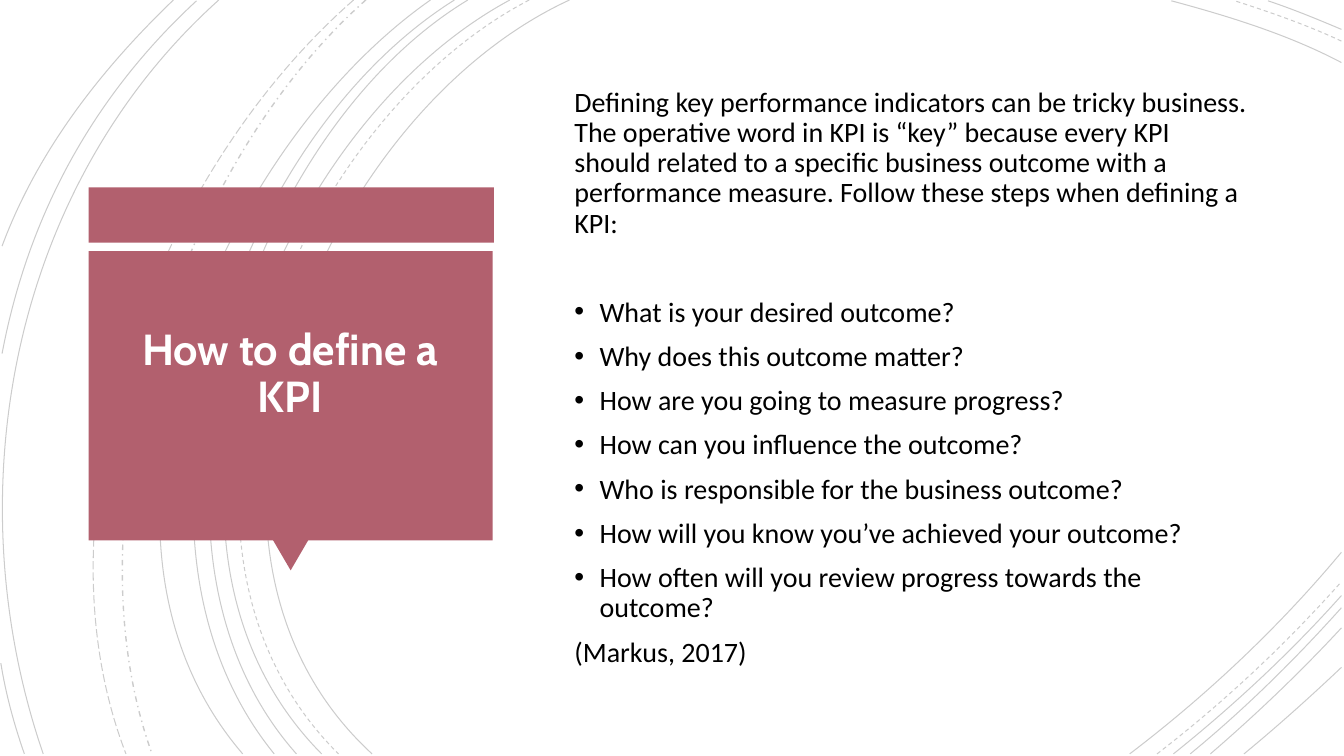
from dataclasses import dataclass
from typing import NamedTuple

from lxml import etree
from pptx import Presentation
from pptx.dml.color import RGBColor
from pptx.enum.dml import MSO_LINE
from pptx.enum.shapes import MSO_SHAPE
from pptx.enum.text import MSO_ANCHOR, MSO_AUTO_SIZE, PP_ALIGN
from pptx.oxml.ns import qn
from pptx.util import Inches, Pt

RECT, TRIANGLE = MSO_SHAPE.RECTANGLE, MSO_SHAPE.ISOSCELES_TRIANGLE
SOLID, DASH = MSO_LINE.SOLID, MSO_LINE.DASH
LONG_DASH, DASH_DOT = MSO_LINE.LONG_DASH, MSO_LINE.DASH_DOT
MIDDLE, CENTER, LEFT = MSO_ANCHOR.MIDDLE, PP_ALIGN.CENTER, PP_ALIGN.LEFT

COLS, ROWS = 32, 18
CELL = Inches(7.5) / ROWS
TITLE_ONLY = 5


@dataclass(frozen=True)
class Theme:
    accent: RGBColor = RGBColor(0xB2, 0x60, 0x6E)
    ink: RGBColor = RGBColor(0, 0, 0)
    paper: RGBColor = RGBColor(0xFF, 0xFF, 0xFF)
    title_font: str = "Cabin"
    body_font: str = "Calibri"
    title_size: float = 31
    body_size: float = 20
    leading: float = 0.9
    gap: float = 10
    section_gap: float = 42
    arc_opacity: int = 20


THEME = Theme()


class Box(NamedTuple):
    col: float
    row: float
    cols: float
    rows: float


class Point(NamedTuple):
    col: float
    row: float


class Arc(NamedTuple):
    start: Point
    bend1: Point
    bend2: Point
    end: Point
    dash: MSO_LINE = SOLID
    width: float = 0.75


class Panel(NamedTuple):
    kind: MSO_SHAPE
    box: Box
    rotation: float = 0


class Para(NamedTuple):
    text: str
    bullet: bool = False
    before: float = THEME.gap


BOTTOM, RIGHT, TOP = 17.95, 31.94, 0.02


def left_arc(x0: float, x1: float, y1: float, x2: float, y2: float, x3: float,
             dash: MSO_LINE = SOLID, width: float = 0.75) -> Arc:
    return Arc(Point(x0, 0), Point(x1, y1), Point(x2, y2), Point(x3, BOTTOM), dash, width)


def top_arc(y0: float, x1: float, y1: float, x2: float, y2: float, x3: float,
            dash: MSO_LINE = SOLID) -> Arc:
    return Arc(Point(RIGHT, y0), Point(x1, y1), Point(x2, y2), Point(x3, TOP), dash)


def corner_arc(x0: float, x1: float, y1: float, x2: float, y2: float, y3: float,
               dash: MSO_LINE = SOLID) -> Arc:
    return Arc(Point(x0, BOTTOM), Point(x1, y1), Point(x2, y2), Point(RIGHT, y3), dash)


ARCS = [
    left_arc(13.56, 7.56, 2.76, 3.43, 12.96, 8.86),
    top_arc(1.49, 30.67, 0.82, 29.23, 0.38, 27.89),
    corner_arc(26.9, 28.73, 16.56, 30.46, 14.93, 13.15),
    left_arc(12.6, 6.84, 3, 2.95, 12.89, 8.06, DASH),
    top_arc(0.98, 31.13, 0.6, 30.24, 0.29, 29.4, DASH),
    corner_arc(27.55, 29.11, 16.75, 30.6, 15.36, 13.85, DASH),
    left_arc(12.14, 6.48, 3.05, 2.64, 12.89, 7.66),
    top_arc(0.7, 31.37, 0.46, 30.79, 0.22, 30.19),
    corner_arc(27.94, 29.35, 16.82, 30.72, 15.55, 14.18),
    left_arc(11.14, 5.86, 3.19, 2.64, 12.98, 7.06),
    corner_arc(28.34, 29.62, 16.9, 30.82, 15.72, 14.47),
    left_arc(10.82, 5.54, 3.31, 2.33, 12.79, 6.53),
    corner_arc(28.82, 29.9, 17.02, 30.96, 16.01, 14.95),
    left_arc(10.25, 5.21, 3.53, 1.27, 12.7, 5.78),
    corner_arc(29.62, 30.41, 17.3, 31.18, 16.61, 15.89),
    left_arc(8.71, 4.22, 3.98, 1.56, 12.22, 3.62, DASH_DOT, 1),
    left_arc(8.42, 3.77, 4.06, 0.7, 11.98, 3, LONG_DASH),
    left_arc(5.21, 0.26, 4.44, -1.1, 11.76, 1.03),
    Arc(Point(4.68, 0.02), Point(2.21, 2.3), Point(0.67, 5.14), Point(0.05, 8.42)),
    Arc(Point(0.02, 15.79), Point(0.14, 16.54), Point(0.34, 17.26), Point(0.58, BOTTOM)),
    Arc(Point(4.13, 0), Point(2.4, 1.66), Point(0.89, 3.6), Point(0.05, 5.86)),
]

PANELS = [
    Panel(RECT, Box(2.11, 4.46, 9.65, 1.32)),
    Panel(TRIANGLE, Box(6.5, 12.86, 0.84, 0.72), 180),
    Panel(RECT, Box(2.11, 5.98, 9.62, 6.89)),
]

TITLE_BOX = Box(2.38, 6.34, 9.05, 6.29)
TITLE_LIFT = 1.22
BODY_BOX = Box(13.44, 2.11, 16.49, 13.78)

BODY = [
    Para("Defining key performance indicators can be tricky business. The operative word "
         "in KPI is “key” because every KPI should related to a specific business outcome "
         "with a performance measure. Follow these steps when defining a KPI:"),
    Para("What is your desired outcome?", True, THEME.section_gap),
    Para("Why does this outcome matter?", True),
    Para("How are you going to measure progress?", True),
    Para("How can you influence the outcome?", True),
    Para("Who is responsible for the business outcome?", True),
    Para("How will you know you’ve achieved your outcome?", True),
    Para("How often will you review progress towards the outcome?", True),
    Para("(Markus, 2017)"),
]


def emu(cells: float) -> int:
    return round(cells * CELL)


def frame(box: Box) -> list[int]:
    return [emu(v) for v in box]


def draw_arc(s, arc: Arc) -> None:
    points = [(emu(pt.col), emu(pt.row)) for pt in arc[:4]]
    fb = s.shapes.build_freeform(*points[0])
    fb.add_line_segments(points[1:], close=False)
    sp = fb.convert_to_shape()
    outline = sp.element.spPr.find(f".//{qn('a:path')}")
    curve = etree.SubElement(outline, qn("a:cubicBezTo"))
    for segment in outline.findall(qn("a:lnTo")):
        curve.append(segment[0])
        outline.remove(segment)
    sp.shadow.inherit = False
    sp.fill.background()
    sp.line.color.rgb = THEME.ink
    sp.line.width = Pt(arc.width)
    sp.line.dash_style = arc.dash
    color = sp.element.spPr.find(f"{qn('a:ln')}//{qn('a:srgbClr')}")
    etree.SubElement(color, qn("a:alpha"), val=str(THEME.arc_opacity * 1000))


def draw_panel(s, panel: Panel) -> None:
    sp = s.shapes.add_shape(panel.kind, *frame(panel.box))
    sp.shadow.inherit = False
    sp.rotation = panel.rotation
    sp.fill.solid()
    sp.fill.fore_color.rgb = THEME.accent
    sp.line.fill.background()


def prepare(tf) -> None:
    tf.word_wrap = True
    tf.auto_size = MSO_AUTO_SIZE.NONE
    tf.vertical_anchor = MIDDLE


def add_run(p, text: str, font: str, size: float, color: RGBColor, bold: bool = False) -> None:
    p.line_spacing = THEME.leading
    r = p.add_run()
    r.text = text
    r.font.name, r.font.size, r.font.bold = font, Pt(size), bold
    r.font.color.rgb = color


def draw_title(s, text: str) -> None:
    sp = s.shapes.title
    sp.left, sp.top, sp.width, sp.height = frame(TITLE_BOX)
    s.shapes.element.append(sp.element)
    tf = sp.text_frame
    prepare(tf)
    tf.margin_bottom = emu(TITLE_LIFT)
    p = tf.paragraphs[0]
    p.alignment = CENTER
    add_run(p, text, THEME.title_font, THEME.title_size, THEME.paper, True)


def draw_body(s, paras: list[Para]) -> None:
    tf = s.shapes.add_textbox(*frame(BODY_BOX)).text_frame
    prepare(tf)
    for i, para in enumerate(paras):
        p = tf.add_paragraph() if i else tf.paragraphs[0]
        p.alignment = LEFT
        p.space_before = Pt(para.before)
        add_run(p, para.text, THEME.body_font, THEME.body_size, THEME.ink)
        if para.bullet:
            pPr = p._p.get_or_add_pPr()
            pPr.set("marL", str(Inches(0.25)))
            pPr.set("indent", str(-Inches(0.25)))
            etree.SubElement(pPr, qn("a:buFont"), typeface="Arial")
            etree.SubElement(pPr, qn("a:buChar"), char="•")


def main() -> None:
    prs = Presentation()
    prs.slide_width, prs.slide_height = emu(COLS), emu(ROWS)
    s = prs.slides.add_slide(prs.slide_layouts[TITLE_ONLY])
    s.background.fill.solid()
    s.background.fill.fore_color.rgb = THEME.paper
    for arc in ARCS:
        draw_arc(s, arc)
    for panel in PANELS:
        draw_panel(s, panel)
    draw_title(s, "How to define a KPI")
    draw_body(s, BODY)
    prs.save("out.pptx")


if __name__ == "__main__":
    main()
